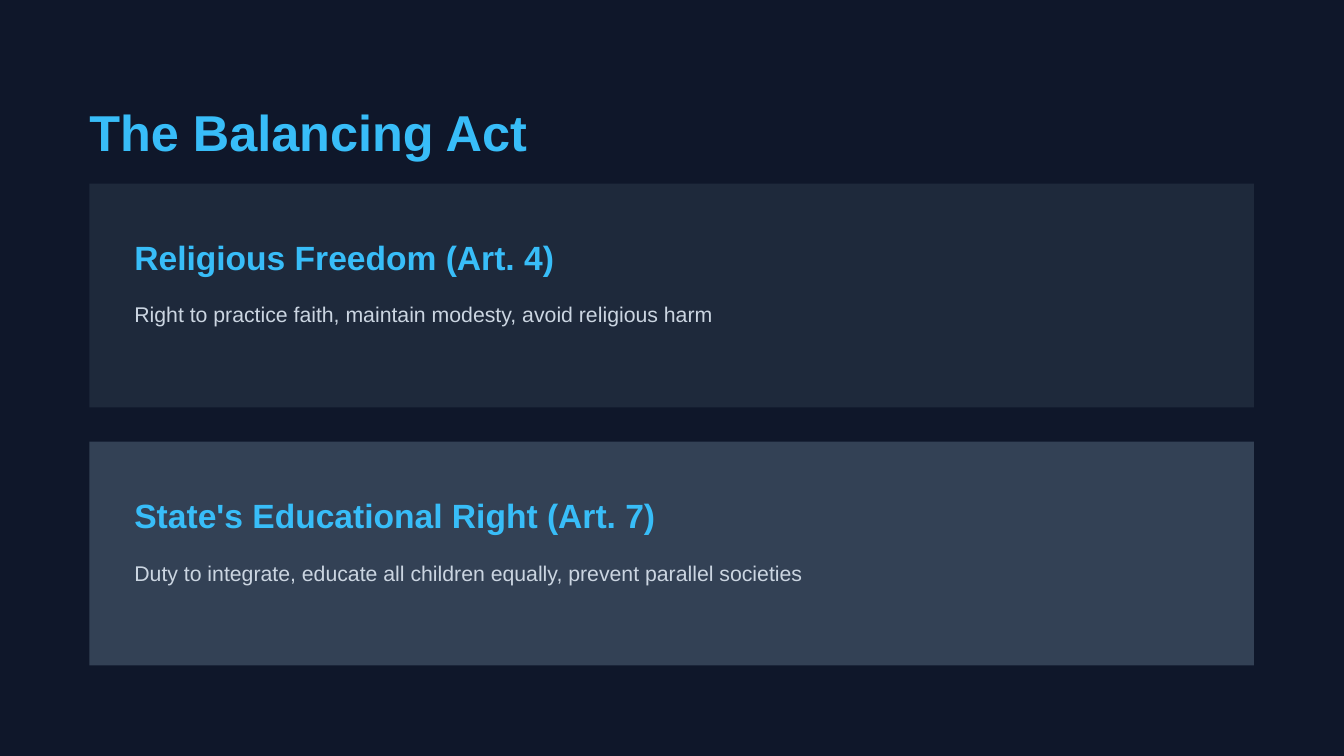
from pptx import Presentation
from pptx.dml.color import RGBColor
from pptx.enum.shapes import MSO_SHAPE
from pptx.util import Cm, Pt


def color(hex_code):
    return RGBColor.from_string(hex_code)


class SlideWriter:
    """Holds the style and the current slide, and adds each kind of element."""

    font = "Arial"
    background = "0F172A"
    accent = "38BDF8"
    muted = "CBD5E1"
    margin = 1.69
    padding = 0.85
    card_width = 22.01
    card_height = 4.23

    def __init__(self, slide):
        self.slide = slide
        fill = slide.background.fill
        fill.solid()
        fill.fore_color.rgb = color(self.background)

    def panel(self, left, top, width, height, fill):
        panel = self.slide.shapes.add_shape(
            MSO_SHAPE.RECTANGLE, Cm(left), Cm(top), Cm(width), Cm(height))
        panel.shadow.inherit = False
        panel.fill.solid()
        panel.fill.fore_color.rgb = color(fill)
        panel.line.fill.background()

    def text(self, words, left, top, width, height, size, ink, bold=False, spacing=1.2):
        frame = self.slide.shapes.add_textbox(
            Cm(left), Cm(top), Cm(width), Cm(height)).text_frame
        frame.word_wrap = True
        frame.margin_left = frame.margin_right = 0
        frame.margin_top = frame.margin_bottom = 0
        frame.text = words
        paragraph = frame.paragraphs[0]
        paragraph.line_spacing = spacing
        font = paragraph.runs[0].font
        font.name = self.font
        font.size = Pt(size)
        font.bold = bold
        font.color.rgb = color(ink)

    def title(self, words):
        self.text(words, self.margin, self.margin, 22.45, 1.14, 27, self.accent, bold=True)

    def card(self, top, fill, heading, detail):
        left = self.margin + self.padding
        width = 20.73
        self.panel(self.margin, top, self.card_width, self.card_height, fill)
        self.text(heading, left, top + self.padding, width, 0.76, 18, self.accent, bold=True)
        self.text(detail, left, top + 2.04, width, 0.56, 11.4, self.muted, spacing=1.4)


def main():
    presentation = Presentation()
    presentation.slide_width = Cm(25.4)
    presentation.slide_height = Cm(14.29)
    writer = SlideWriter(presentation.slides.add_slide(presentation.slide_layouts[6]))
    writer.title("The Balancing Act")
    principles = [
        ("1E293B", "Religious Freedom (Art. 4)",
         "Right to practice faith, maintain modesty, avoid religious harm"),
        ("334155", "State's Educational Right (Art. 7)",
         "Duty to integrate, educate all children equally, prevent parallel societies"),
    ]
    first_top, gap = 3.47, 0.65
    for index, principle in enumerate(principles):
        writer.card(first_top + index * (writer.card_height + gap), *principle)
    presentation.save("out.pptx")


if __name__ == "__main__":
    main()
